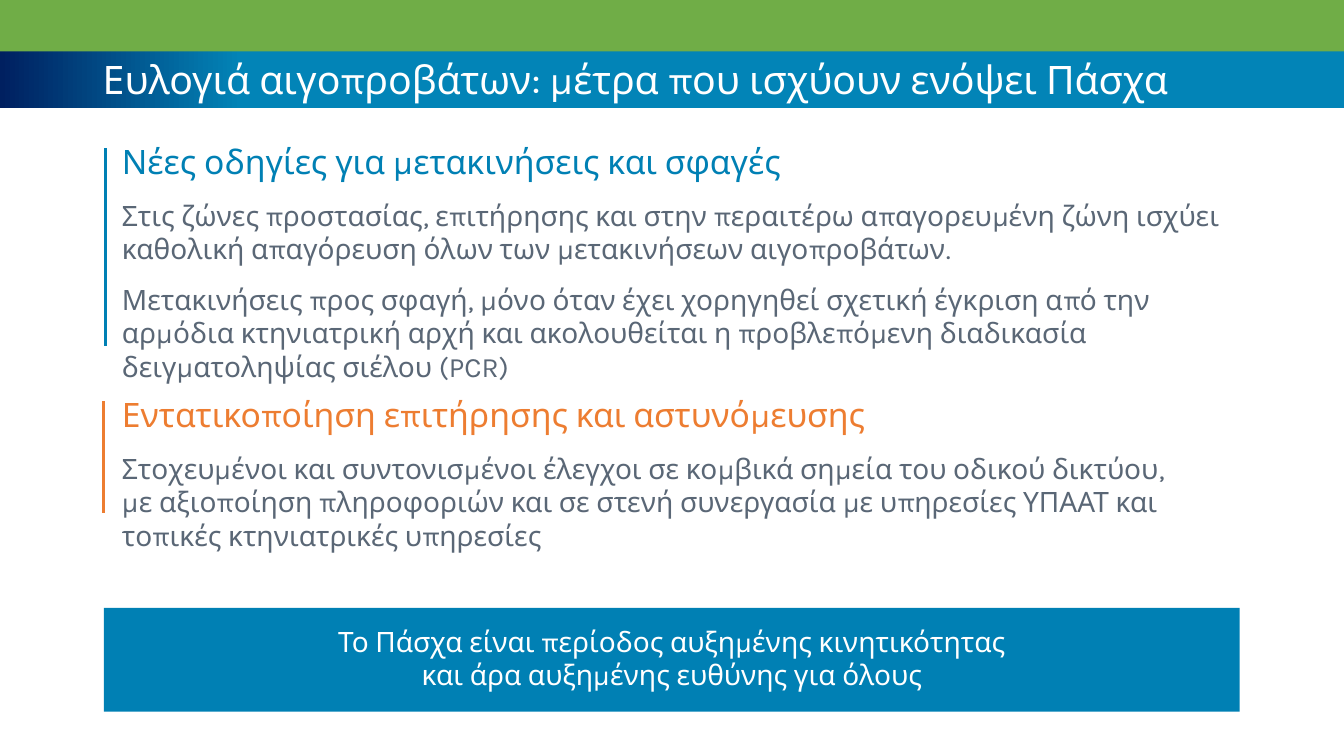
from lxml import etree
from pptx import Presentation
from pptx.dml.color import RGBColor
from pptx.enum.shapes import MSO_CONNECTOR, MSO_SHAPE
from pptx.enum.text import MSO_ANCHOR, MSO_AUTO_SIZE, PP_ALIGN
from pptx.oxml.ns import qn
from pptx.util import Pt

RECT = MSO_SHAPE.RECTANGLE
LINE = MSO_CONNECTOR.STRAIGHT
TOP, MIDDLE = MSO_ANCHOR.TOP, MSO_ANCHOR.MIDDLE
LEFT, CENTER = PP_ALIGN.LEFT, PP_ALIGN.CENTER
FIT_SHAPE = MSO_AUTO_SIZE.SHAPE_TO_FIT_TEXT

THEME = {
    "font": "Karla",
    "title": 28, "heading": 24, "body": 20,
    "white": RGBColor.from_string("FFFFFF"),
    "green": RGBColor.from_string("70AD47"),
    "navy": RGBColor.from_string("002060"),
    "band": RGBColor.from_string("0284B7"),
    "blue": RGBColor.from_string("0080B4"),
    "orange": RGBColor.from_string("ED7D31"),
    "gray": RGBColor.from_string("5A6776"),
}


def write(p, text, size="body", color="gray", align=LEFT, after=0, spacing=1.0):
    """Fill a paragraph, without bullet, in the theme's type."""
    pPr = p._p.get_or_add_pPr()
    pPr.set("marL", "0")
    pPr.set("indent", "0")
    etree.SubElement(pPr, qn("a:buNone"))
    p.alignment = align
    p.line_spacing = spacing
    p.space_before, p.space_after = Pt(0), Pt(after)
    p.text = text
    for r in p.runs:
        r.font.name = THEME["font"]
        r.font.size = Pt(THEME[size])
        r.font.color.rgb = THEME[color]


def set_frame(sp, box, insets, anchor=TOP):
    """Place a shape and set up its text frame; insets run left, top, right, bottom."""
    sp.left, sp.top, sp.width, sp.height = [Pt(v) for v in box]
    tf = sp.text_frame
    tf.word_wrap = True
    tf.auto_size = FIT_SHAPE
    tf.vertical_anchor = anchor
    tf.margin_left, tf.margin_top, tf.margin_right, tf.margin_bottom = [Pt(v) for v in insets]
    return tf


prs = Presentation()
prs.slide_width, prs.slide_height = Pt(960), Pt(540)
slide = prs.slides.add_slide(prs.slide_layouts.get_by_name("Two Content"))
shapes = slide.shapes

# Header bands, behind the title
for top, height, color in [(0, 36.7, "green"), (36.7, 40.3, "band")]:
    sp = shapes.add_shape(RECT, Pt(0), Pt(top), Pt(960), Pt(height))
    sp.shadow.inherit = False
    sp.line.fill.background()
    if color == "band":
        sp.fill.gradient()
        sp.fill.gradient_angle = 0
        for stop, (position, shade) in zip(sp.fill.gradient_stops, [(0, "navy"), (0.18, "band")]):
            stop.position = position
            stop.color.rgb = THEME[shade]
    else:
        sp.fill.solid()
        sp.fill.fore_color.rgb = THEME[color]
    shapes._spTree.insert(2, sp._element)

# Title
tf = set_frame(shapes.title, (66.2, 39.6, 893.8, 38.2), (7.2, 3.6, 7.2, 3.6))
write(tf.paragraphs[0], "Ευλογιά αιγοπροβάτων: μέτρα που ισχύουν ενόψει Πάσχα",
      size="title", color="white", spacing=0.9)

# Sections: placeholder, box, accent colour, rule (x, top, bottom), heading, paragraphs
sections = [
    (1, (75.6, 89.3, 838.8, 172.8), "blue", (75.6, 105.8, 247),
     "Νέες οδηγίες για μετακινήσεις και σφαγές",
     ["Στις ζώνες προστασίας, επιτήρησης και στην περαιτέρω απαγορευμένη ζώνη ισχύει "
      "καθολική απαγόρευση όλων των μετακινήσεων αιγοπροβάτων.",
      "Μετακινήσεις προς σφαγή, μόνο όταν έχει χορηγηθεί σχετική έγκριση από την αρμόδια "
      "κτηνιατρική αρχή και ακολουθείται η προβλεπόμενη διαδικασία δειγματοληψίας σιέλου (PCR)"]),
    (2, (75.6, 270, 794.2, 136.8), "orange", (74.2, 286.6, 366.5),
     "Εντατικοποίηση επιτήρησης και αστυνόμευσης",
     ["Στοχευμένοι και συντονισμένοι έλεγχοι σε κομβικά σημεία του οδικού δικτύου, "
      "με αξιοποίηση πληροφοριών και σε στενή συνεργασία με υπηρεσίες ΥΠΑΑΤ και "
      "τοπικές κτηνιατρικές υπηρεσίες"]),
]
for idx, box, accent, (x, top, bottom), heading, paragraphs in sections:
    tf = set_frame(slide.placeholders[idx], box, (11.5, 11.5, 11.5, 11.5))
    write(tf.paragraphs[0], heading, size="heading", color=accent, after=12)
    for text in paragraphs:
        write(tf.add_paragraph(), text, after=12)

    rule = shapes.add_connector(LINE, Pt(x), Pt(top), Pt(x), Pt(bottom))
    rule.line.color.rgb = THEME[accent]
    rule.line.width = Pt(2.25)
    etree.SubElement(rule._element.spPr, qn("a:effectLst"))

# Closing banner
banner = shapes.add_shape(RECT, Pt(0), Pt(0), Pt(0), Pt(0))
banner.shadow.inherit = False
banner.fill.solid()
banner.fill.fore_color.rgb = THEME["blue"]
banner.line.fill.background()
tf = set_frame(banner, (74.2, 434.2, 811.4, 74.2), (11.5, 11.5, 11.5, 14.4), anchor=MIDDLE)
write(tf.paragraphs[0],
      "Το Πάσχα είναι περίοδος αυξημένης κινητικότητας\vκαι άρα αυξημένης ευθύνης για όλους",
      color="white", align=CENTER)

prs.save("out.pptx")
